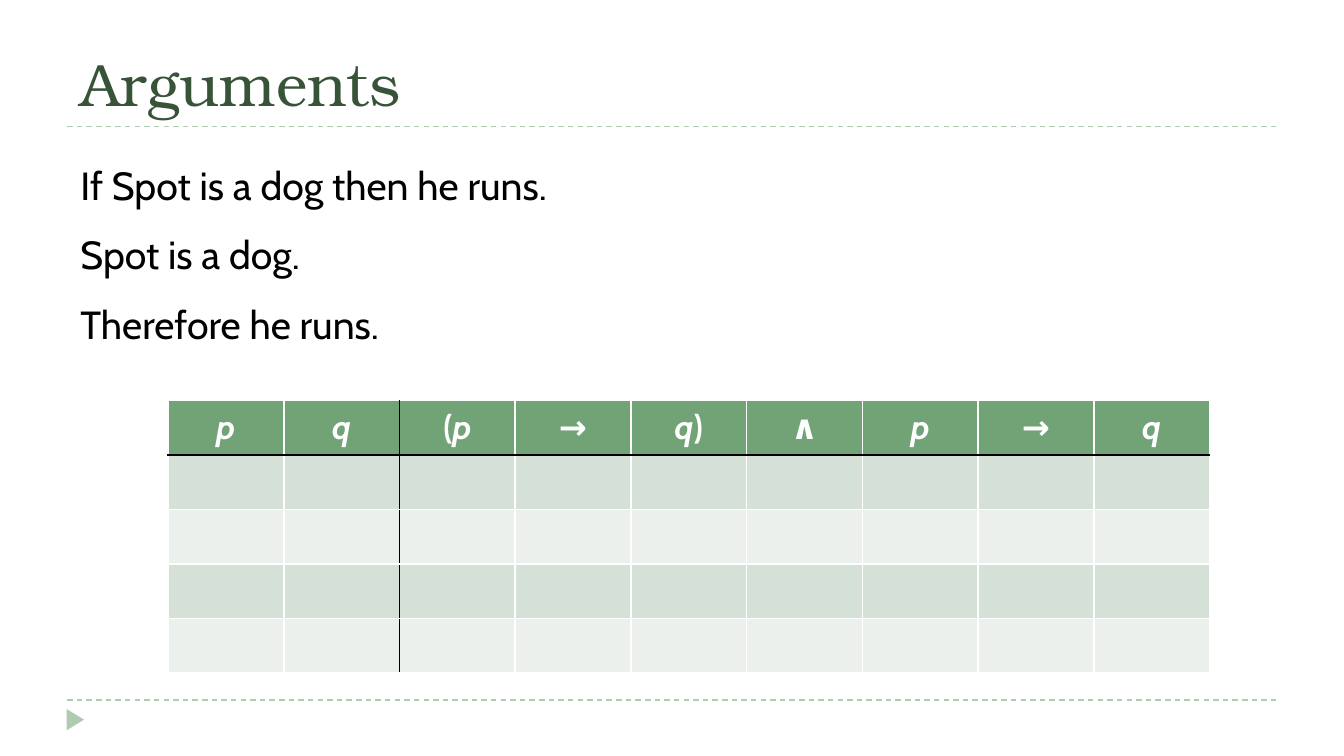
from dataclasses import dataclass

from lxml.etree import SubElement
from pptx import Presentation
from pptx.dml.color import RGBColor
from pptx.enum.dml import MSO_LINE
from pptx.enum.shapes import MSO_CONNECTOR, MSO_SHAPE
from pptx.enum.text import MSO_ANCHOR, PP_ALIGN
from pptx.oxml.ns import qn
from pptx.slide import Slide
from pptx.table import _Cell
from pptx.util import Inches, Pt

COLORS = {
    "title": "375439",
    "rule": "B0CCB0",
    "header": "72A376",
    "odd": "D5E0D6",
    "even": "EBF0EC",
    "white": "FFFFFF",
    "black": "000000",
}
HEADINGS = ["p", "q", "(p", "→", "q)", "∧", "p", "→", "q"]
ROW_COUNT = 5
VARIABLE_COUNT = 2


def color(name: str) -> RGBColor:
    return RGBColor.from_string(COLORS[name])


@dataclass
class TextBlock:
    left: float
    top: float
    width: float
    height: float
    lines: list[str]
    font: str
    size: float
    color: str
    anchor: MSO_ANCHOR = MSO_ANCHOR.TOP
    space_after: float = 0


TEXT_BLOCKS = [
    TextBlock(0.5, 0.12, 9, 0.81, ["Arguments"], "TeX Gyre Bonum", 32,
              "title", MSO_ANCHOR.BOTTOM),
    TextBlock(0.5, 1.15, 6.17, 1.5,
              ["If Spot is a dog then he runs.", "Spot is a dog.", "Therefore he runs."],
              "Cabin", 21, "black", space_after=12),
]


def draw_text(page: Slide, block: TextBlock) -> None:
    box = page.shapes.add_textbox(Inches(block.left), Inches(block.top),
                                  Inches(block.width), Inches(block.height))
    frame = box.text_frame
    frame.word_wrap = True
    frame.vertical_anchor = block.anchor
    frame.text = "\n".join(block.lines)
    for para in frame.paragraphs:
        para.space_after = Pt(block.space_after)
        for span in para.runs:
            span.font.name = block.font
            span.font.size = Pt(block.size)
            span.font.color.rgb = color(block.color)


def draw_rule(page: Slide, top: float) -> None:
    rule = page.shapes.add_connector(MSO_CONNECTOR.STRAIGHT, Inches(0.5), Inches(top),
                                     Inches(9.5), Inches(top))
    rule.line.color.rgb = color("rule")
    rule.line.width = Pt(0.75)
    rule.line.dash_style = MSO_LINE.DASH
    SubElement(rule._element.spPr, qn("a:effectLst"))


def draw_marker(page: Slide) -> None:
    marker = page.shapes.add_shape(MSO_SHAPE.ISOSCELES_TRIANGLE, Inches(0.48), Inches(5.29),
                                   Inches(0.16), Inches(0.13))
    marker.rotation = 90
    marker.shadow.inherit = False
    marker.fill.solid()
    marker.fill.fore_color.rgb = color("rule")
    marker.line.fill.background()


def set_borders(cell: _Cell, dark_sides: set[str]) -> None:
    properties = cell._tc.get_or_add_tcPr()
    for side in "LRTB":
        border = SubElement(properties, qn(f"a:ln{side}"), w=str(Pt(1)))
        fill = SubElement(border, qn("a:solidFill"))
        name = "black" if side in dark_sides else "white"
        SubElement(fill, qn("a:srgbClr"), val=COLORS[name])


def write_heading(cell: _Cell, heading: str) -> None:
    para = cell.text_frame.paragraphs[0]
    para.alignment = PP_ALIGN.CENTER
    for symbol in heading:
        span = para.add_run()
        span.text = symbol
        span.font.name = "Cabin"
        span.font.size = Pt(18)
        span.font.bold = True
        span.font.italic = symbol.isalpha()
        span.font.color.rgb = color("white")


def draw_truth_table(page: Slide) -> None:
    table = page.shapes.add_table(ROW_COUNT, len(HEADINGS), Inches(1.25), Inches(2.98),
                                  Inches(7.75), Inches(2.03)).table
    for row in range(ROW_COUNT):
        for column, heading in enumerate(HEADINGS):
            cell = table.cell(row, column)
            dark_edges = {
                "R": column == VARIABLE_COUNT - 1,
                "L": column == VARIABLE_COUNT,
                "B": row == 0,
                "T": row == 1,
            }
            set_borders(cell, {side for side, dark in dark_edges.items() if dark})
            cell.fill.solid()
            band = "odd" if row % 2 else "even"
            cell.fill.fore_color.rgb = color("header" if row == 0 else band)
            if row == 0:
                write_heading(cell, heading)


def main() -> None:
    deck = Presentation()
    deck.slide_width = Inches(10)
    deck.slide_height = Inches(10 * 9 / 16)
    page = deck.slides.add_slide(deck.slide_layouts[6])
    for top in (5.21, 0.94):
        draw_rule(page, top)
    draw_marker(page)
    for block in TEXT_BLOCKS:
        draw_text(page, block)
    draw_truth_table(page)
    deck.save("out.pptx")


if __name__ == "__main__":
    main()
